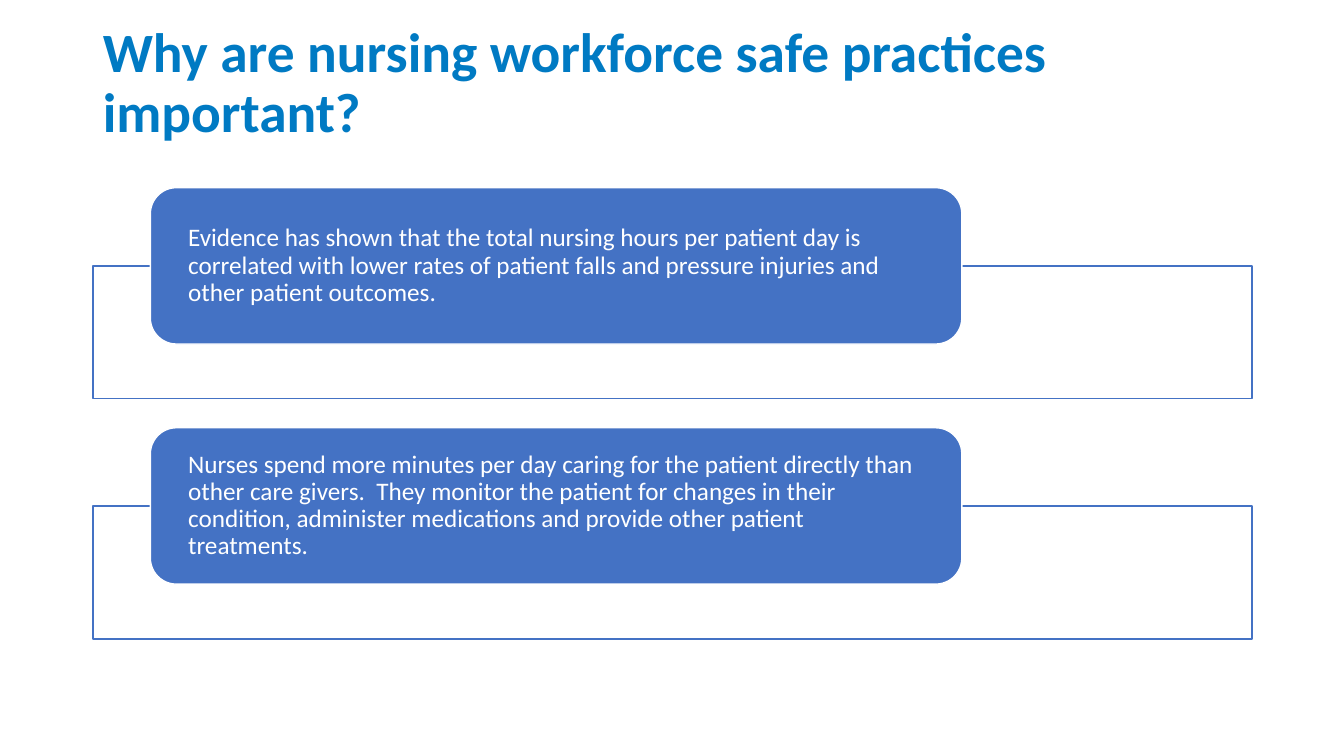
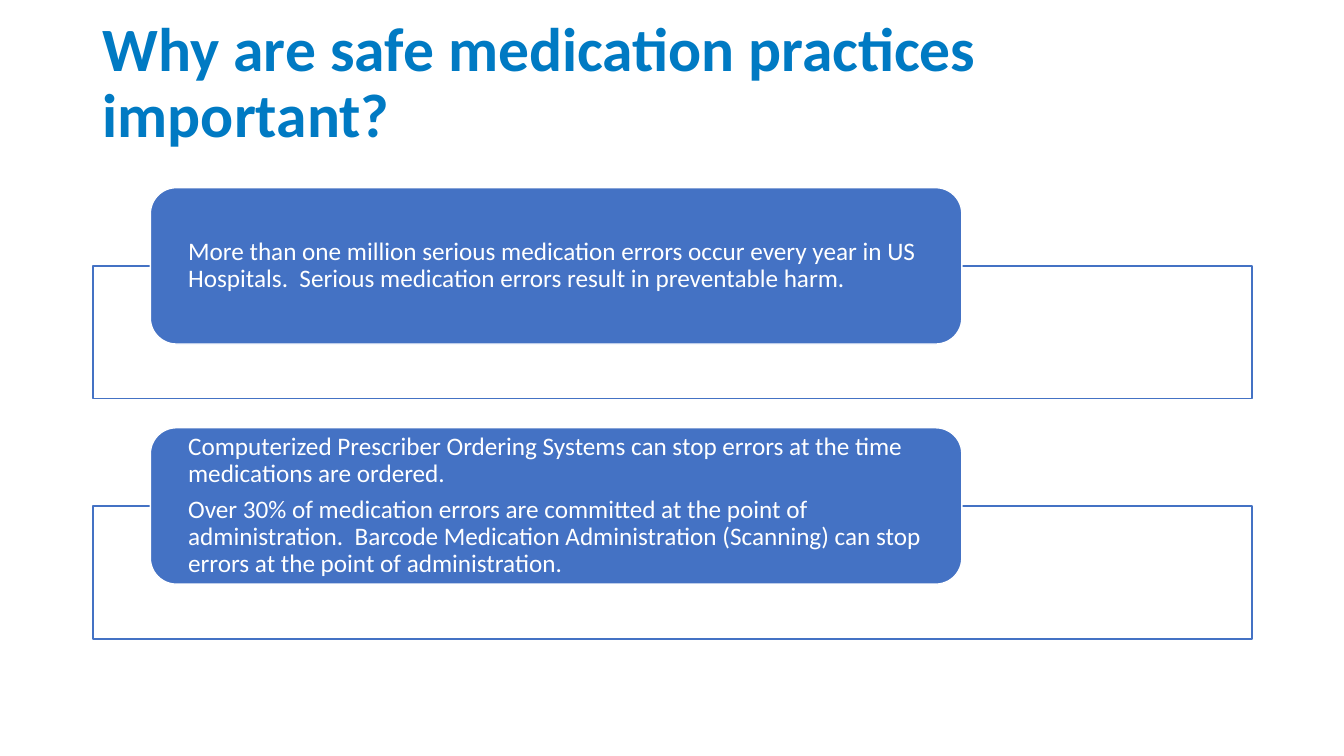
from pptx import Presentation
from pptx.dml.color import RGBColor
from pptx.enum.shapes import MSO_SHAPE
from pptx.enum.text import MSO_ANCHOR, MSO_AUTO_SIZE, PP_ALIGN
from pptx.util import Cm, Pt

COLORS = {"title": "007AC3", "card": "4472C4", "white": "FFFFFF"}
FONT = "Calibri"

LEFT, WIDTH = 2.34, 29.21
FRAME_TOP, FRAME_HEIGHT = 6.7, 3.35
CARD_LEFT, CARD_WIDTH, CARD_HEIGHT = 3.79, 20.45, 3.94
ROW_PITCH = 6.05

SLIDES = [
    {
        "title": "Why are nursing workforce safe practices important?",
        "title_size": 39.6,
        "cards": [
            ["Evidence has shown that the total nursing hours per patient day is "
             "correlated with lower rates of patient falls and pressure injuries and "
             "other patient outcomes."],
            ["Nurses spend more minutes per day caring for the patient directly than "
             "other care givers.  They monitor the patient for changes in their "
             "condition, administer medications and provide other patient treatments."],
        ],
    },
    {
        "title": "Why are safe medication practices important?",
        "title_size": 44,
        "cards": [
            ["More than one million serious medication errors occur every year in US "
             "Hospitals.  Serious medication errors result in preventable harm."],
            ["Computerized Prescriber Ordering Systems can stop errors at the time "
             "medications are ordered.",
             "Over 30% of medication errors are committed at the point of "
             "administration.  Barcode Medication Administration (Scanning) can stop "
             "errors at the point of administration."],
        ],
    },
]


def rgb(name):
    return RGBColor.from_string(COLORS[name])


def write_text(shape, paragraphs, *, size, color, bold=False, space_after=0,
               side_inset=0.25, end_inset=0.13):
    """Fill a shape with left-aligned, vertically centred paragraphs."""
    frame = shape.text_frame
    frame.word_wrap = True
    frame.auto_size = MSO_AUTO_SIZE.NONE
    frame.vertical_anchor = MSO_ANCHOR.MIDDLE
    frame.margin_left = frame.margin_right = Cm(side_inset)
    frame.margin_top = frame.margin_bottom = Cm(end_inset)
    frame.text = "\n".join(paragraphs)
    for paragraph in frame.paragraphs:
        paragraph.alignment = PP_ALIGN.LEFT
        paragraph.line_spacing = 0.9
        paragraph.space_before = Pt(0)
        paragraph.space_after = Pt(space_after)
        paragraph.font.name = FONT
        paragraph.font.size = Pt(size)
        paragraph.font.bold = bold
        paragraph.font.color.rgb = rgb(color)


def add_box(slide, kind, left, top, width, height, *, fill, line):
    shape = slide.shapes.add_shape(kind, Cm(left), Cm(top), Cm(width), Cm(height))
    shape.shadow.inherit = False
    shape.fill.solid()
    shape.fill.fore_color.rgb = rgb(fill)
    shape.line.color.rgb = rgb(line)
    shape.line.width = Pt(1)
    return shape


def set_title(slide, text, size):
    title = slide.shapes.title
    title.left, title.top = Cm(LEFT), Cm(0.66)
    title.width, title.height = Cm(WIDTH), Cm(2.95)
    write_text(title, [text], size=size, color="title", bold=True)


def add_card_row(slide, row, paragraphs):
    """Add an outlined frame with a text card centred on its top edge."""
    frame_top = FRAME_TOP + row * ROW_PITCH
    add_box(slide, MSO_SHAPE.RECTANGLE, LEFT, frame_top, WIDTH, FRAME_HEIGHT,
            fill="white", line="card")
    card = add_box(slide, MSO_SHAPE.ROUNDED_RECTANGLE, CARD_LEFT,
                   frame_top - CARD_HEIGHT / 2, CARD_WIDTH, CARD_HEIGHT,
                   fill="card", line="white")
    write_text(card, paragraphs, size=18, color="white", space_after=6.3,
               side_inset=0.76, end_inset=0)


def main():
    presentation = Presentation()
    presentation.slide_width, presentation.slide_height = Cm(33.87), Cm(19.05)
    title_only = presentation.slide_layouts.get_by_name("Title Only")
    for content in SLIDES:
        slide = presentation.slides.add_slide(title_only)
        set_title(slide, content["title"], content["title_size"])
        for row, paragraphs in enumerate(content["cards"]):
            add_card_row(slide, row, paragraphs)
    presentation.save("out.pptx")


if __name__ == "__main__":
    main()
